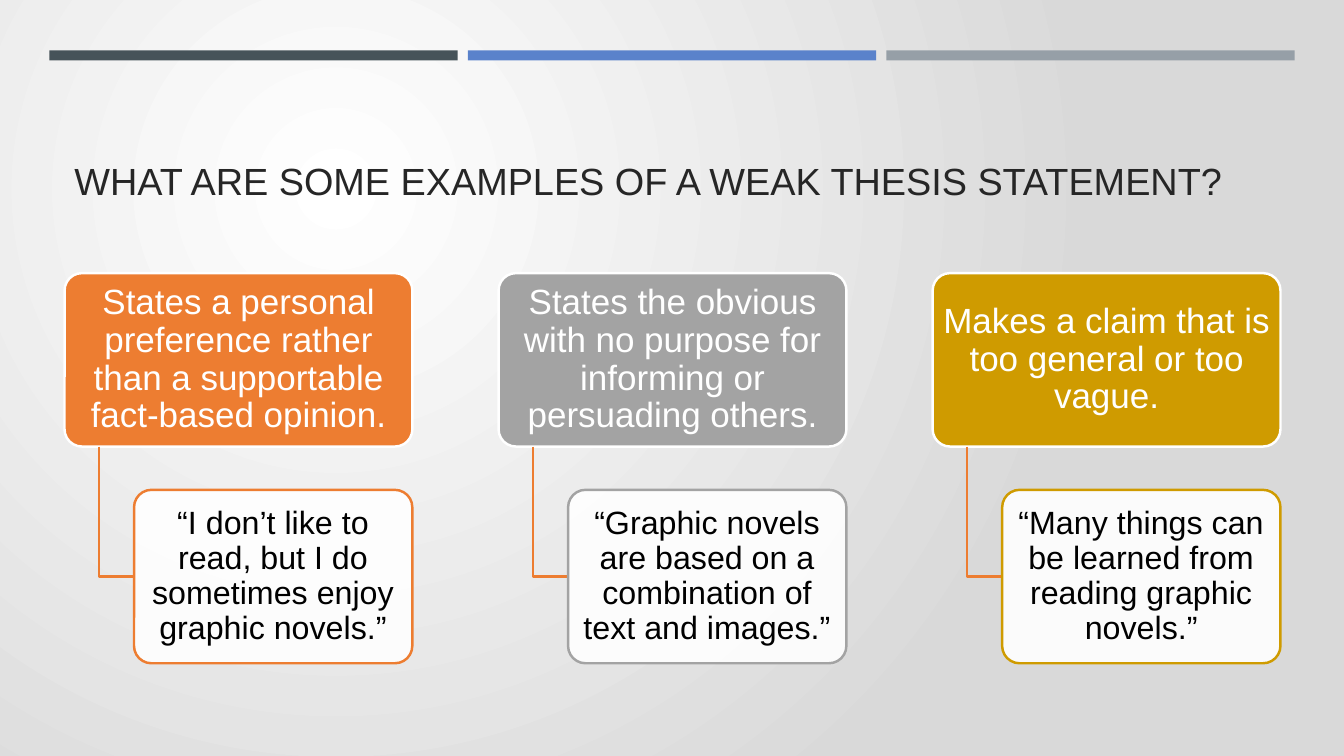
from dataclasses import dataclass

import lxml.etree
import pptx
import pptx.dml.color
import pptx.enum.shapes
import pptx.enum.text
import pptx.oxml.ns
import pptx.shapes.autoshape
import pptx.slide
import pptx.text.text
import pptx.util

Inches = pptx.util.Inches
Pt = pptx.util.Pt
Shapes = pptx.enum.shapes.MSO_SHAPE
Align = pptx.enum.text.PP_ALIGN
Anchor = pptx.enum.text.MSO_ANCHOR

COLORS = {
    "white": "FFFFFF",
    "backdrop": "D9D9D9",
    "slate": "465359",
    "blue": "5A82CB",
    "steel": "969FA7",
    "title": "262626",
    "black": "000000",
    "orange": "ED7D31",
    "gray": "A3A3A3",
    "gold": "CF9B00",
}
BAR_COLORS = ("slate", "blue", "steel")
BAR_LEFT, BAR_TOP, BAR_WIDTH, BAR_HEIGHT, BAR_PITCH = 0.49, 0.5, 4.05, 0.1, 4.15
COLUMN_LEFT, COLUMN_PITCH = 0.64, 4.305
REASON_TOP, REASON_WIDTH, BOX_HEIGHT = 2.71, 3.45, 1.72
EXAMPLE_TOP, EXAMPLE_INDENT, EXAMPLE_WIDTH = 4.86, 0.69, 2.76
BRANCH_INDENT = 0.34
OUTLINE = 1.75


@dataclass(frozen=True)
class Weakness:
    reason: str
    example: str
    color: str


WEAKNESSES = (
    Weakness(
        "States a personal preference rather than a supportable fact-based opinion.",
        "“I don’t like to read, but I do sometimes enjoy graphic novels.”",
        "orange",
    ),
    Weakness(
        "States the obvious with no purpose for informing or persuading others.",
        "“Graphic novels are based on a combination of text and images.”",
        "gray",
    ),
    Weakness(
        "Makes a claim that is too general or too vague.",
        "“Many things can be learned from reading graphic novels.”",
        "gold",
    ),
)


def rgb(name: str) -> pptx.dml.color.RGBColor:
    return pptx.dml.color.RGBColor.from_string(COLORS[name])


def write(frame: pptx.text.text.TextFrame, text: str, *, size: float, color: str,
          align: Align = Align.CENTER, anchor: Anchor = Anchor.MIDDLE,
          inset: tuple[float, float] = (0.04, 0.03)) -> None:
    frame.word_wrap = True
    frame.vertical_anchor = anchor
    frame.margin_left = frame.margin_right = Inches(inset[0])
    frame.margin_top = frame.margin_bottom = Inches(inset[1])
    paragraph = frame.paragraphs[0]
    paragraph.alignment = align
    paragraph.line_spacing = 0.9
    run = paragraph.add_run()
    run.text = text
    run.font.name = "Arial"
    run.font.size = Pt(size)
    run.font.color.rgb = rgb(color)


def paint_background(slide: pptx.slide.Slide) -> None:
    slide.element.cSld.insert(0, pptx.oxml.parse_xml(
        f'<p:bg {pptx.oxml.ns.nsdecls("p", "a")}><p:bgPr><a:gradFill rotWithShape="1"><a:gsLst>'
        f'<a:gs pos="0"><a:srgbClr val="{COLORS["white"]}"/></a:gs>'
        f'<a:gs pos="100000"><a:srgbClr val="{COLORS["backdrop"]}"/></a:gs></a:gsLst>'
        '<a:path path="circle"><a:fillToRect l="50000" t="50000" r="100000" b="100000"/></a:path>'
        '</a:gradFill><a:effectLst/></p:bgPr></p:bg>'
    ))


def add_bar(slide: pptx.slide.Slide, left: float, color: str) -> None:
    bar = slide.shapes.add_shape(
        Shapes.RECTANGLE, Inches(left), Inches(BAR_TOP), Inches(BAR_WIDTH), Inches(BAR_HEIGHT))
    bar.shadow.inherit = False
    bar.fill.solid()
    bar.fill.fore_color.rgb = rgb(color)
    bar.line.fill.background()


def add_box(slide: pptx.slide.Slide, left: float, top: float, width: float,
            fill: str, line: str) -> pptx.shapes.autoshape.Shape:
    box = slide.shapes.add_shape(
        Shapes.ROUNDED_RECTANGLE, Inches(left), Inches(top), Inches(width), Inches(BOX_HEIGHT))
    box.adjustments[0] = 0.1
    box.shadow.inherit = False
    box.fill.solid()
    box.fill.fore_color.rgb = rgb(fill)
    box.line.color.rgb = rgb(line)
    box.line.width = Pt(OUTLINE)
    return box


def soften_fill(box: pptx.shapes.autoshape.Shape, percent: int) -> None:
    fill_color = box.element.spPr.find(
        f'{pptx.oxml.ns.qn("a:solidFill")}/{pptx.oxml.ns.qn("a:srgbClr")}')
    alpha = lxml.etree.SubElement(fill_color, pptx.oxml.ns.qn("a:alpha"))
    alpha.set("val", str(percent * 1000))


def add_branch(slide: pptx.slide.Slide, left: float) -> None:
    stem = Inches(left + BRANCH_INDENT)
    elbow = Inches(EXAMPLE_TOP + BOX_HEIGHT / 2)
    outline = slide.shapes.build_freeform(stem, Inches(REASON_TOP + BOX_HEIGHT))
    outline.add_line_segments(
        [(stem, elbow), (Inches(left + EXAMPLE_INDENT), elbow)], close=False)
    branch = outline.convert_to_shape()
    branch.shadow.inherit = False
    branch.fill.background()
    branch.line.color.rgb = rgb("orange")
    branch.line.width = Pt(OUTLINE)


def add_weakness(slide: pptx.slide.Slide, weakness: Weakness, left: float) -> None:
    reason = add_box(slide, left, REASON_TOP, REASON_WIDTH, weakness.color, "white")
    write(reason.text_frame, weakness.reason, size=25, color="white")
    add_branch(slide, left)
    example = add_box(
        slide, left + EXAMPLE_INDENT, EXAMPLE_TOP, EXAMPLE_WIDTH, "white", weakness.color)
    soften_fill(example, 90)
    write(example.text_frame, weakness.example, size=23, color="black")


def main() -> None:
    deck = pptx.Presentation()
    deck.slide_width, deck.slide_height = Inches(13.33), Inches(7.5)
    slide = deck.slides.add_slide(deck.slide_layouts[6])
    paint_background(slide)
    for index, color in enumerate(BAR_COLORS):
        add_bar(slide, BAR_LEFT + index * BAR_PITCH, color)
    title = slide.shapes.add_textbox(Inches(0.64), Inches(0.77), Inches(12.06), Inches(1.3))
    write(title.text_frame, "WHAT ARE SOME EXAMPLES OF A WEAK THESIS STATEMENT?",
          size=27, color="title", align=Align.LEFT, anchor=Anchor.BOTTOM, inset=(0.1, 0.05))
    for index, weakness in enumerate(WEAKNESSES):
        add_weakness(slide, weakness, COLUMN_LEFT + index * COLUMN_PITCH)
    deck.save("out.pptx")


if __name__ == "__main__":
    main()
